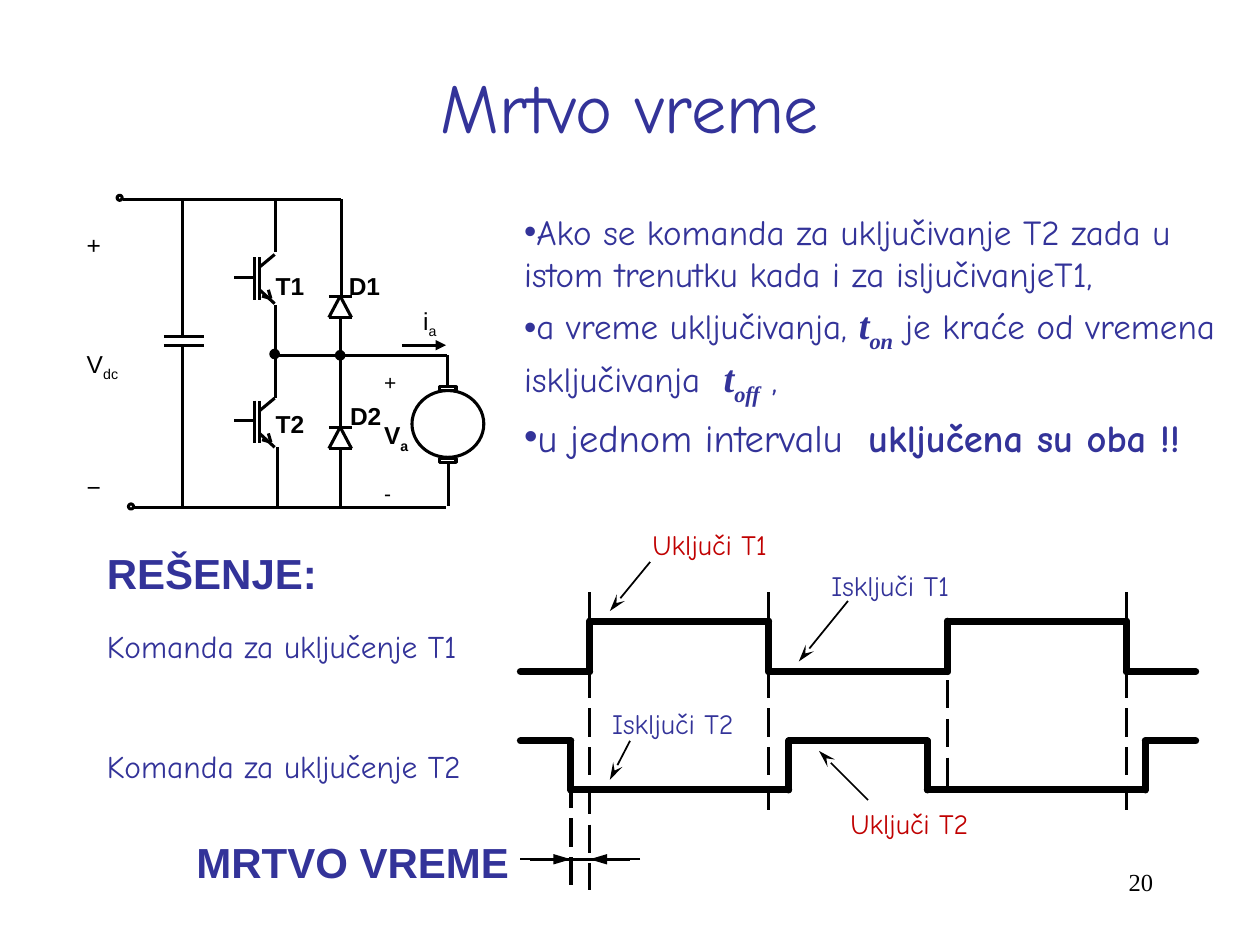
from itertools import pairwise

from lxml.etree import SubElement
from pptx import Presentation
from pptx.dml.color import RGBColor
from pptx.enum.dml import MSO_LINE
from pptx.enum.shapes import MSO_CONNECTOR, MSO_SHAPE
from pptx.enum.text import MSO_ANCHOR, MSO_AUTO_SIZE, PP_ALIGN
from pptx.oxml.ns import qn
from pptx.util import Inches, Pt

INDIGO = RGBColor(0x33, 0x33, 0x99)
RED = RGBColor(0xC0, 0x00, 0x00)
BLACK = RGBColor(0, 0, 0)
WHITE = RGBColor(0xFF, 0xFF, 0xFF)

HAND = {"name": "Comic Neue", "size": Pt(20), "bold": False, "italic": False}
HAND_LARGE = HAND | {"size": Pt(22)}
SYMBOL = {"name": "Times New Roman", "size": Pt(22), "bold": True, "italic": True}
LABEL = {"name": "Arial", "size": Pt(14), "bold": False}
LABEL_BOLD = LABEL | {"bold": True}
SIGN = LABEL | {"size": Pt(12)}
HEADING = {"name": "Arial", "size": Pt(24), "bold": True, "color": INDIGO}
SUB = {"baseline": -25000}


class SlideBuilder:
    def __init__(self, slide):
        self.slide = slide

    def add_runs(self, paragraph, runs, color=BLACK):
        for text, style in runs:
            run = paragraph.add_run()
            run.text = text
            run.font.color.rgb = style.get("color", color)
            for key, value in style.items():
                if key == "baseline":
                    run.font._element.set(key, str(value))
                elif key != "color":
                    setattr(run.font, key, value)

    def place(self, shape, box):
        for key, value in zip(("left", "top", "width", "height"), box):
            setattr(shape, key, Inches(value))

    def title(self, box, text):
        shape = self.slide.shapes.title
        self.place(shape, box)
        shape.text_frame.vertical_anchor = MSO_ANCHOR.MIDDLE
        paragraph = shape.text_frame.paragraphs[0]
        paragraph.alignment = PP_ALIGN.CENTER
        self.add_runs(paragraph, [(text, HAND | {"size": Pt(40)})], INDIGO)

    def bullets(self, box, items):
        shape = self.slide.placeholders[1]
        self.place(shape, box)
        frame = shape.text_frame
        frame.auto_size = MSO_AUTO_SIZE.NONE
        for index, runs in enumerate(items):
            paragraph = frame.add_paragraph() if index else frame.paragraphs[0]
            properties = paragraph._p.get_or_add_pPr()
            properties.set("marL", "0")
            properties.set("indent", "0")
            paragraph.space_before = Pt(4 if index else 0)
            SubElement(properties, qn("a:buChar"), char="•")
            self.add_runs(paragraph, runs, INDIGO)

    def text(self, box, *paragraphs, gap=0, wrap=True, align=PP_ALIGN.LEFT):
        shape = self.slide.shapes.add_textbox(*map(Inches, box))
        frame = shape.text_frame
        frame.word_wrap = wrap
        frame.auto_size = MSO_AUTO_SIZE.NONE if wrap else MSO_AUTO_SIZE.SHAPE_TO_FIT_TEXT
        for index, runs in enumerate(paragraphs):
            paragraph = frame.add_paragraph() if index else frame.paragraphs[0]
            paragraph.alignment = align
            paragraph.space_before = Pt(gap if index else 0)
            self.add_runs(paragraph, runs)

    def line(self, start, end, width=1.75, dash=None, arrow=None, length="med", cap="flat"):
        connector = self.slide.shapes.add_connector(
            MSO_CONNECTOR.STRAIGHT, *map(Inches, (*start, *end)))
        connector.line.color.rgb = BLACK
        connector.line.width = Pt(width)
        if dash:
            connector.line.dash_style = dash
        outline = connector.line._get_or_add_ln()
        outline.set("cap", cap)
        if arrow:
            SubElement(outline, qn("a:tailEnd"), type=arrow, w="med", len=length)
        SubElement(connector._element.spPr, qn("a:effectLst"))

    def chain(self, *points, **style):
        for start, end in pairwise(points):
            self.line(start, end, **style)

    def shape(self, kind, box, fill=WHITE):
        shape = self.slide.shapes.add_shape(kind, *map(Inches, box))
        shape.shadow.inherit = False
        shape.fill.solid()
        shape.fill.fore_color.rgb = fill
        shape.line.color.rgb = BLACK
        shape.line.width = Pt(1.75)

    def transistor(self, y):
        for x in (2.02, 2.06):
            self.line((x, y - 0.16), (x, y + 0.18))
        self.line((1.86, y), (2.01, y))
        self.line((2.18, y - 0.18), (2.06, y - 0.08))
        self.line((2.06, y + 0.1), (2.18, y + 0.21))
        self.chain((2.13, y + 0.1), (2.15, y + 0.17), (2.08, y + 0.15))

    def diode(self, top):
        base = top + 0.17
        self.line((2.61, top), (2.79, top))
        self.chain((2.7, top), (2.79, base), (2.61, base), (2.7, top))


def draw_circuit(builder):
    # Wires of the half bridge
    builder.chain((0.98, 1.58), (2.71, 1.58), (2.71, 2.34))
    builder.line((1.04, 4.03), (3.54, 4.03))
    builder.chain((2.2, 2.82), (3.55, 2.82), (3.55, 3.07))
    for x, top, bottom in (
        (1.45, 1.58, 2.66), (1.45, 2.75, 4.03),
        (2.19, 1.58, 2), (2.19, 2.42, 3.16), (2.2, 3.55, 4.03),
        (2.7, 2.52, 3.38), (2.7, 3.57, 4.03), (3.56, 3.68, 4.02),
    ):
        builder.line((x, top), (x, bottom))
    # Capacitor, switches and motor
    for y in (2.67, 2.74):
        builder.line((1.3, y), (1.62, y))
    for y in (2.2, 3.34):
        builder.transistor(y)
    for top in (2.35, 3.39):
        builder.diode(top)
    builder.shape(MSO_SHAPE.OVAL, (3.27, 3.1, 0.57, 0.53))
    for y in (3.07, 3.64):
        builder.shape(MSO_SHAPE.RECTANGLE, (3.49, y, 0.13, 0.03))
    # Terminals and nodes
    for x, y in ((0.93, 1.55), (1.02, 4)):
        builder.shape(MSO_SHAPE.OVAL, (x, y, 0.04, 0.04))
    for x, y in ((2.15, 2.78), (2.67, 2.79)):
        builder.shape(MSO_SHAPE.OVAL, (x, y, 0.06, 0.06), BLACK)
    # Labels
    for name, x, y in (("T1", 2.09, 2.1), ("T2", 2.09, 3.2),
                       ("D1", 2.67, 2.1), ("D2", 2.68, 3.13)):
        builder.text((x, y, 0.47, 0.25), [(name, LABEL_BOLD)])
    builder.text((3.26, 2.38, 0.47, 0.24), [("i", LABEL), ("a", LABEL | SUB)])
    builder.line((3.19, 2.74), (3.54, 2.74), arrow="triangle")
    builder.text((0.59, 1.78, 0.6, 2.2), [("+", LABEL)],
                 [("V", LABEL), ("dc", LABEL | SUB)], [("−", LABEL)], gap=51)
    builder.text((2.95, 2.88, 0.49, 1.2), [("+", SIGN)],
                 [("V", LABEL_BOLD), ("a", LABEL_BOLD | SUB)], [("-", SIGN)], gap=15)


def draw_timing(builder):
    # Dashed time marks
    for x, top, bottom in ((4.53, 5.88, 7.06), (4.68, 4.7, 7.06), (6.1, 4.7, 6.43),
                           (7.52, 5.09, 6.27), (8.94, 4.7, 6.43)):
        builder.line((x, top), (x, bottom), width=0, dash=MSO_LINE.LONG_DASH)
    # Gate signals: each edge switches between the two levels
    for edges, levels in (((4.68, 6.1, 7.52, 8.94), (5.33, 4.93)),
                          ((4.53, 6.26, 7.36, 9.09), (5.88, 6.27))):
        points = [(4.13, levels[0])]
        for index, x in enumerate(edges):
            points += [(x, levels[index % 2]), (x, levels[(index + 1) % 2])]
        builder.chain(*points, (9.49, levels[0]), width=4, cap="rnd")
    # Callouts
    for name, color, box, start, end in (
        ("Uključi T1", RED, (5.08, 4.14, 1.34, 0.37), (5.16, 4.46), (4.84, 4.85)),
        ("Isključi T1", INDIGO, (6.5, 4.46, 1.41, 0.37), (6.73, 4.77), (6.34, 5.25)),
        ("Isključi T2", INDIGO, (4.76, 5.56, 1.38, 0.37), (5, 5.88), (4.84, 6.19)),
        ("Uključi T2", RED, (6.65, 6.35, 1.38, 0.37), (6.89, 6.35), (6.5, 5.96)),
    ):
        builder.text(box, [(name, HAND | {"size": Pt(16), "color": color})], wrap=False)
        builder.line(start, end, width=1, arrow="stealth", length="lg")
    # Dead time dimension
    builder.line((4.21, 6.82), (5, 6.82), width=0)
    for start, end in ((4.13, 4.53), (5.08, 4.68)):
        builder.line((start, 6.82), (end, 6.82), width=1.25, arrow="triangle", length="lg")
    # Captions
    command = HAND | {"size": Pt(18), "color": INDIGO}
    for name, style, box in (
        ("REŠENJE:", HEADING, (0.75, 4.3, 1.89, 0.5)),
        ("Komanda za uključenje T1", command, (0.75, 4.93, 3.23, 0.4)),
        ("Komanda za uključenje T2", command, (0.75, 5.88, 3.27, 0.4)),
        ("MRTVO VREME", HEADING, (1.46, 6.59, 2.71, 0.51)),
    ):
        builder.text(box, [(name, style)], wrap=False)


def main():
    presentation = Presentation()
    presentation.slide_width, presentation.slide_height = Inches(10), Inches(7.5)
    builder = SlideBuilder(presentation.slides.add_slide(presentation.slide_layouts[1]))
    builder.title((0.75, 0.21, 8.5, 1.25), "Mrtvo vreme")
    builder.bullets((4.06, 1.62, 5.94, 2.2), [
        [("Ako se komanda za uključivanje T2 zada u istom trenutku "
          "kada i za isljučivanjeT1,", HAND)],
        [("a vreme uključivanja, ", HAND), ("t", SYMBOL), ("on", SYMBOL | SUB),
         (" je kraće od vremena isključivanja  ", HAND),
         ("t", SYMBOL), ("off", SYMBOL | SUB), (" ,", HAND)],
        [("u jednom intervalu  ", HAND_LARGE),
         ("uključena su oba !!", HAND_LARGE | {"bold": True})],
    ])
    draw_circuit(builder)
    draw_timing(builder)
    # Slide number
    builder.text((7.17, 6.83, 2.08, 0.5), [("20", {"name": "Times New Roman", "size": Pt(14)})],
                 align=PP_ALIGN.RIGHT)
    presentation.save("out.pptx")


if __name__ == "__main__":
    main()
